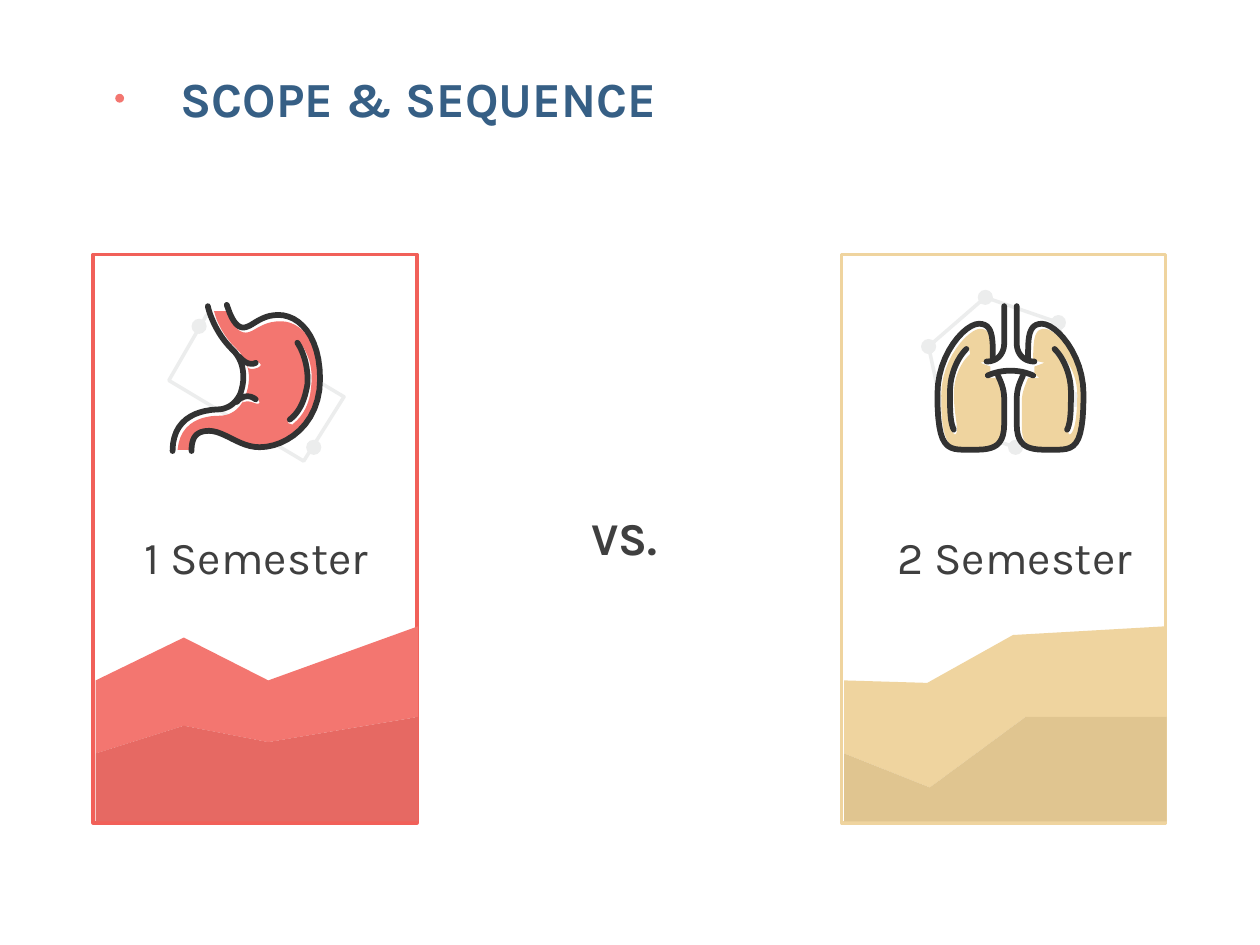
import pptx
import pptx.dml.color
import pptx.enum.shapes
import pptx.enum.text
import pptx.util
import lxml.etree

COLORS = {
    "white": "FFFFFF", "ink": "323232", "text": "3F3F3F", "title": "365F85",
    "network": "ECEDED", "coral": "F37670", "coral_edge": "F16059",
    "coral_dark": "E66963", "sand": "EFD49F", "sand_dark": "E0C590",
}
SHAPE = pptx.enum.shapes.MSO_SHAPE
ALIGN = pptx.enum.text.PP_ALIGN
ICON_LINE = 3.3

# An outline is a start point, then (x, y) for a line or six numbers for a curve.
LUNG_AXIS = 8.02
LUNG = [(8.16, 2.84), (8.16, 2.68, 8.16, 2.57, 8.27, 2.57),
        (8.38, 2.57, 8.6, 2.81, 8.6, 3.13), (8.6, 3.57, 8.52, 3.57, 8.36, 3.57),
        (8.34, 3.57), (8.19, 3.57, 8.07, 3.57, 8.07, 3.37),
        (8.07, 3.16), (8.07, 3.1, 8.09, 3.04, 8.12, 2.98)]
WINDPIPE = [(8.07, 2.43), (8.07, 2.73), (8.07, 2.79, 8.11, 2.87, 8.21, 2.87)]
LUNG_CREASE = [(8.37, 2.77), (8.44, 2.84, 8.5, 2.97, 8.5, 3.11),
               (8.5, 3.25, 8.5, 3.35, 8.47, 3.41)]
BRIDGE = [(7.84, 2.98), (7.95, 2.93, 8.09, 2.93, 8.2, 2.98)]
LUNG_FILL_AXIS = 8.035
LUNG_FILL = [
    [(8.2, 2.86), (8.29, 2.88), (8.21, 2.91), (8.21, 2.97), (8.25, 3), (8.16, 3),
     (8.13, 3.07, 8.11, 3.13, 8.11, 3.18), (8.11, 3.39),
     (8.11, 3.56, 8.2, 3.57, 8.36, 3.57), (8.52, 3.57, 8.6, 3.57, 8.6, 3.14),
     (8.6, 2.84, 8.38, 2.61, 8.29, 2.61), (8.21, 2.61, 8.2, 2.69, 8.2, 2.86)],
    [(8.38, 2.76), (8.47, 2.84, 8.55, 2.98, 8.55, 3.13),
     (8.55, 3.24, 8.54, 3.43, 8.49, 3.45), (8.45, 3.43, 8.5, 3.3, 8.5, 3.13),
     (8.5, 2.99, 8.44, 2.87, 8.37, 2.81)],
]
LUNG_NODES = [(7.37, 2.75), (7.82, 2.36), (8.4, 2.56),
              (8.53, 3.17), (8.06, 3.55), (7.5, 3.36)]

STOMACH_OUTER = [(1.8, 2.42), (1.82, 2.48, 1.86, 2.6, 1.93, 2.6),
                 (2, 2.6, 2.06, 2.5, 2.21, 2.5), (2.37, 2.5, 2.54, 2.66, 2.54, 3.01),
                 (2.54, 3.37, 2.27, 3.55, 2.06, 3.55),
                 (1.9, 3.55, 1.78, 3.42, 1.66, 3.42), (1.55, 3.42, 1.52, 3.48, 1.52, 3.58)]
STOMACH_CREASE = [(2.36, 2.72), (2.4, 2.78, 2.45, 2.9, 2.44, 3.05),
                  (2.42, 3.17, 2.38, 3.27, 2.3, 3.33)]
STOMACH_INNER = [
    [(1.65, 2.43), (1.66, 2.48, 1.71, 2.64, 1.84, 2.77),
     (1.94, 2.86, 1.95, 3, 1.91, 3.12), (1.87, 3.21, 1.8, 3.25, 1.72, 3.25),
     (1.54, 3.26, 1.37, 3.34, 1.37, 3.58)],
    [(1.9, 2.83), (1.94, 2.88, 1.99, 2.9, 2.03, 2.88)],
    [(1.88, 3.19), (1.92, 3.14, 1.98, 3.13, 2.03, 3.17)],
]
STOMACH_FILL = [
    [(1.8, 2.47), (1.7, 2.47), (1.71, 2.52, 1.76, 2.66, 1.88, 2.77),
     (1.98, 2.87, 2, 3, 1.95, 3.14), (1.9, 3.27, 1.81, 3.3, 1.74, 3.3),
     (1.62, 3.3, 1.43, 3.34, 1.41, 3.57), (1.52, 3.57),
     (1.52, 3.51, 1.54, 3.41, 1.68, 3.41), (1.81, 3.41, 1.9, 3.55, 2.08, 3.55),
     (2.26, 3.54, 2.54, 3.4, 2.54, 3.02), (2.54, 2.7, 2.38, 2.55, 2.23, 2.55),
     (2.07, 2.55, 2.02, 2.64, 1.95, 2.64), (1.87, 2.64, 1.82, 2.52, 1.8, 2.47)],
    [(2.38, 2.72), (2.44, 2.79, 2.49, 2.91, 2.47, 3.07),
     (2.46, 3.2, 2.41, 3.3, 2.32, 3.37), (2.29, 3.36), (2.29, 3.34),
     (2.38, 3.27, 2.42, 3.18, 2.43, 3.07), (2.44, 2.92, 2.4, 2.81, 2.36, 2.75)],
    [(1.96, 2.87), (2, 2.88, 2.07, 2.86, 2.07, 2.9), (2.06, 2.92, 2, 2.94, 1.97, 2.92)],
    [(1.96, 3.14), (1.98, 3.13, 2.06, 3.15, 2.06, 3.2), (2.03, 3.22, 1.98, 3.16, 1.92, 3.2)],
]
STOMACH_FRAME = [(1.34, 3.02), (1.64, 2.5), (2.73, 3.15), (2.41, 3.66)]
STOMACH_NODES = [(1.58, 2.59), (2.49, 3.55)]


def inch(value):
    return pptx.util.Cm(value * 2.54)


def rgb(name):
    return pptx.dml.color.RGBColor.from_string(COLORS[name])


def mirror(outline, axis):
    return [tuple(2 * axis - v if i % 2 == 0 else v for i, v in enumerate(step))
            for step in outline]


def flatten(outline, steps=12):
    """Turn lines and Bezier curves into a list of points in EMU."""
    points = [outline[0]]
    for step in outline[1:]:
        if len(step) == 2:
            points.append(step)
            continue
        ends = points[-1] + step
        for t in (n / steps for n in range(1, steps + 1)):
            weights = ((1 - t) ** 3, 3 * t * (1 - t) ** 2, 3 * t * t * (1 - t), t ** 3)
            points.append(tuple(sum(w * v for w, v in zip(weights, ends[axis::2]))
                                for axis in (0, 1)))
    return [(inch(x), inch(y)) for x, y in points]


class Deck:
    """Holds the style and the current slide."""

    font = "Karla"

    def __init__(self, prs):
        self.slide = prs.slides.add_slide(prs.slide_layouts[6])
        self.shapes = self.slide.shapes

    def style(self, sp, fill=None, line=None, width=2):
        sp.shadow.inherit = False
        if fill:
            sp.fill.solid()
            sp.fill.fore_color.rgb = rgb(fill)
        else:
            sp.fill.background()
        if line:
            sp.line.color.rgb = rgb(line)
            sp.line.width = pptx.util.Pt(width)
        else:
            sp.line.fill.background()
        return sp

    def card(self, left, edge):
        sp = self.shapes.add_shape(SHAPE.ROUNDED_RECTANGLE, inch(left), inch(2.02),
                                   inch(2.57), inch(4.51))
        sp.adjustments[0] = 0
        self.style(sp, "white", edge)

    def dot(self, x, y, size, color):
        sp = self.shapes.add_shape(SHAPE.OVAL, inch(x - size / 2), inch(y - size / 2),
                                   inch(size), inch(size))
        self.style(sp, color)

    def outline(self, outlines, close, **look):
        first, *others = [flatten(o) for o in outlines]
        builder = self.shapes.build_freeform(*first[0], scale=1.0)
        builder.add_line_segments(first[1:], close=close)
        for points in others:
            builder.move_to(*points[0])
            builder.add_line_segments(points[1:], close=close)
        return self.style(builder.convert_to_shape(), **look)

    def area(self, *outlines, color):
        self.outline(outlines, True, fill=color)

    def strokes(self, *outlines):
        sp = self.outline(outlines, False, line="ink", width=ICON_LINE)
        ln = sp.line._get_or_add_ln()
        ln.set("cap", "rnd")
        lxml.etree.SubElement(ln, pptx.oxml.ns.qn("a:round"))

    def network(self, frame, nodes):
        self.outline([frame], True, line="network")
        for x, y in nodes:
            self.dot(x, y, 0.12, "network")

    def text(self, text, box, size=26, color="text", bold=False, align=ALIGN.CENTER):
        tf = self.shapes.add_textbox(*map(inch, box)).text_frame
        tf.word_wrap = True
        tf.auto_size = pptx.enum.text.MSO_AUTO_SIZE.SHAPE_TO_FIT_TEXT
        tf.margin_left = tf.margin_right = tf.margin_top = tf.margin_bottom = 0
        tf.text = text
        p = tf.paragraphs[0]
        p.alignment = align
        font = p.runs[0].font
        font.name, font.size, font.bold = self.font, pptx.util.Pt(size), bold
        font.color.rgb = rgb(color)


def main():
    prs = pptx.Presentation()
    prs.slide_width, prs.slide_height = inch(10), inch(7.5)
    s = Deck(prs)
    s.card(6.68, "sand")
    s.card(0.74, "coral_edge")

    s.network(LUNG_NODES, LUNG_NODES)
    s.area(*(mirror(o, LUNG_FILL_AXIS) for o in LUNG_FILL), color="sand")
    s.area(*LUNG_FILL, color="sand")
    s.strokes(LUNG_CREASE)
    s.strokes(mirror(LUNG_CREASE, LUNG_AXIS))
    half = [LUNG, WINDPIPE]
    s.strokes(*half, *(mirror(o, LUNG_AXIS) for o in half), BRIDGE)

    s.network(STOMACH_FRAME, STOMACH_NODES)
    s.area(*STOMACH_FILL, color="coral")
    s.strokes(STOMACH_OUTER)
    s.strokes(STOMACH_CREASE)
    s.strokes(*STOMACH_INNER)

    for left, color, upper, lower in (
            (0.76, "coral", [(0.76, 5.4), (1.46, 5.06), (2.13, 5.4)], [(1.46, 5.76), (2.13, 5.89)]),
            (6.7, "sand", [(6.7, 5.4), (7.36, 5.42), (8.04, 5.04)], [(7.38, 6.25), (8.14, 5.69)])):
        right = left + 2.56
        ridge = [(left, 5.98), *lower, (right, 5.69)]
        s.area([*upper, (right, 4.97), *reversed(ridge)], color=color)
        s.area([*ridge, (right, 6.52), (left, 6.52)], color=color + "_dark")

    s.text("1 Semester", (1.04, 4.2, 1.99, 0.44))
    s.text("2 Semester", (7.12, 4.2, 1.99, 0.44), align=ALIGN.LEFT)
    s.text("VS. ", (4.12, 4.05, 1.76, 0.44), bold=True)
    s.text("SCOPE & SEQUENCE", (1.08, 0.54, 4.48, 0.47), 28, "title", True)
    s.dot(0.95, 0.78, 0.07, "coral")
    prs.save("out.pptx")


if __name__ == "__main__":
    main()
